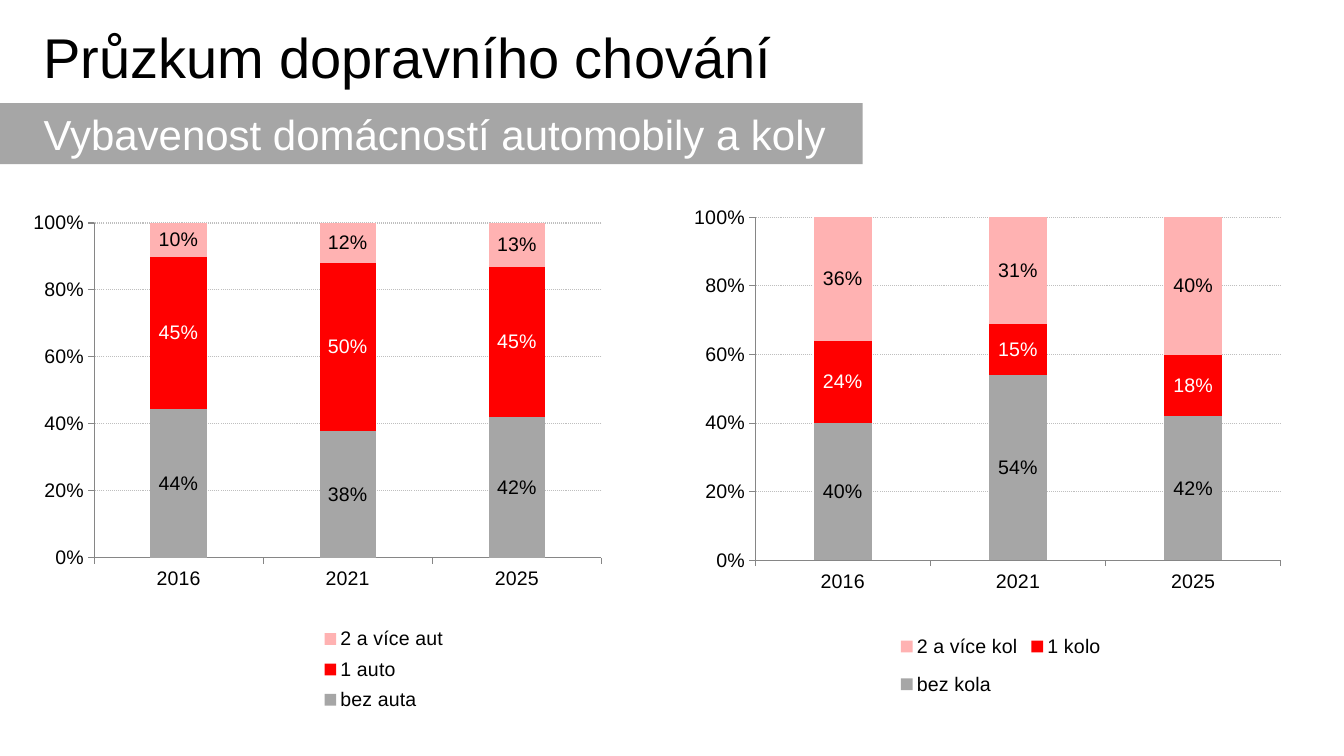
"""Build a slide comparing household car and bicycle ownership."""
from dataclasses import dataclass

from lxml import etree
from pptx import Presentation
from pptx import util as u
from pptx.chart.data import CategoryChartData
from pptx.dml.color import RGBColor
from pptx.enum import chart as ch, dml, shapes, text
from pptx.oxml import ns

FONT = "Arial"
YEARS = ("2016", "2021", "2025")
SERIES_COLORS = (("A6A6A6", "000000"), ("FF0000", "FFFFFF"), ("FFB2B2", "000000"))
CHART_TOP, CHART_W, CHART_H = 4.62, 16, 14


@dataclass(frozen=True)
class Box:
    """Position and size in centimetres."""
    left: float
    top: float
    width: float
    height: float

    def lengths(self) -> tuple:
        return tuple(u.Cm(v) for v in (self.left, self.top, self.width, self.height))


@dataclass(frozen=True)
class Ownership:
    """One chart with the areas of its plot and legend inside it."""
    left: float
    plot: Box
    legend: Box
    series: dict


CHARTS = (
    Ownership(0.84, Box(1.46, 1, 12.85, 8.44), Box(7.1, 11, 3.4, 2.5), {
        "bez auta": (0.44, 0.38, 0.42),
        "1 auto": (0.45, 0.5, 0.45),
        "2 a více aut": (0.1, 0.12, 0.13)}),
    Ownership(17.32, Box(1.71, 0.86, 13.25, 8.64), Box(5.2, 11, 5.4, 2.3), {
        "bez kola": (0.4, 0.54, 0.42),
        "1 kolo": (0.24, 0.15, 0.18),
        "2 a více kol": (0.36, 0.31, 0.4)}),
)


def rgb(value: str) -> RGBColor:
    return RGBColor.from_string(value)


def set_font(font, size: float, color: str) -> None:
    font.name, font.size, font.bold = FONT, u.Pt(size), False
    font.color.rgb = rgb(color)


def write(sp, content: str, *, size: float, color: str, inset: float) -> None:
    tf = sp.text_frame
    tf.word_wrap = True
    tf.auto_size = text.MSO_AUTO_SIZE.NONE
    tf.vertical_anchor = text.MSO_ANCHOR.MIDDLE
    tf.margin_left, tf.margin_right = u.Cm(inset), u.Cm(0.25)
    tf.margin_top = tf.margin_bottom = u.Cm(0.13)
    p = tf.paragraphs[0]
    p.alignment = text.PP_ALIGN.LEFT
    p.line_spacing = 1.0
    r = p.add_run()
    r.text = content
    set_font(r.font, size, color)


def set_layout(parent, box: Box, inner: bool = False) -> None:
    for old in parent.findall(ns.qn("c:layout")):
        parent.remove(old)
    layout = etree.Element(ns.qn("c:layout"))
    manual = etree.SubElement(layout, ns.qn("c:manualLayout"))
    values = {"layoutTarget": "inner"} if inner else {}
    values |= {"xMode": "edge", "yMode": "edge",
               "x": box.left / CHART_W, "y": box.top / CHART_H,
               "w": box.width / CHART_W, "h": box.height / CHART_H}
    for tag, value in values.items():
        etree.SubElement(manual, ns.qn(f"c:{tag}")).set("val", str(value))
    position = parent.find(ns.qn("c:legendPos"))
    if position is None:
        parent.insert(0, layout)
    else:
        position.addnext(layout)


def format_axis(axis) -> None:
    axis.major_tick_mark = ch.XL_TICK_MARK.OUTSIDE
    axis.minor_tick_mark = ch.XL_TICK_MARK.NONE
    axis.format.line.color.rgb = rgb("868686")
    axis.format.line.width = u.Pt(0.75)
    set_font(axis.tick_labels.font, 14, "000000")


def add_ownership_chart(s, item: Ownership) -> None:
    data = CategoryChartData(number_format="0%")
    data.categories = YEARS
    for name, values in item.series.items():
        data.add_series(name, values)
    box = Box(item.left, CHART_TOP, CHART_W, CHART_H)
    chart = s.shapes.add_chart(
        ch.XL_CHART_TYPE.COLUMN_STACKED_100, *box.lengths(), data).chart
    chart.has_title = False
    set_font(chart.font, 14, "000000")

    plot = chart.plots[0]
    plot.gap_width, plot.overlap, plot.vary_by_categories = 200, 100, False
    for series, (fill, label) in zip(plot.series, SERIES_COLORS):
        series.format.fill.solid()
        series.format.fill.fore_color.rgb = rgb(fill)
        labels = series.data_labels
        labels.show_value = True
        labels.number_format, labels.number_format_is_linked = "0%", False
        set_font(labels.font, 14, label)

    format_axis(chart.category_axis)
    axis = chart.value_axis
    format_axis(axis)
    axis.minimum_scale, axis.maximum_scale, axis.major_unit = 0, 1, 0.2
    axis.tick_labels.number_format = "0%"
    axis.tick_labels.number_format_is_linked = False
    axis.has_major_gridlines = True
    grid = axis.major_gridlines.format.line
    grid.color.rgb, grid.width = rgb("BFBFBF"), u.Pt(0.75)
    grid.dash_style = dml.MSO_LINE.ROUND_DOT

    chart.has_legend = True
    legend = chart.legend
    legend.position = ch.XL_LEGEND_POSITION.RIGHT
    legend.include_in_layout = False
    set_font(legend.font, 14, "000000")
    set_layout(legend._element, item.legend)
    set_layout(chart._chartSpace.chart.plotArea, item.plot, inner=True)


def main() -> None:
    prs = Presentation()
    prs.slide_width, prs.slide_height = u.Cm(33.87), u.Cm(19.05)
    s = prs.slides.add_slide(prs.slide_layouts[5])

    title = s.shapes.title
    title.left, title.top, title.width, title.height = Box(0.84, 0.43, 23.77, 1.96).lengths()
    write(title, "Průzkum dopravního chování", size=40, color="000000", inset=0.25)

    band = s.shapes.add_shape(
        shapes.MSO_SHAPE.RECTANGLE, *Box(0, 2.6, 21.74, 1.54).lengths())
    band.shadow.inherit = False
    band.fill.solid()
    band.fill.fore_color.rgb = rgb("A6A6A6")
    band.line.fill.background()
    write(band, "Vybavenost domácností automobily a koly",
          size=30, color="FFFFFF", inset=1.1)

    for item in CHARTS:
        add_ownership_chart(s, item)
    prs.save("out.pptx")


if __name__ == "__main__":
    main()
